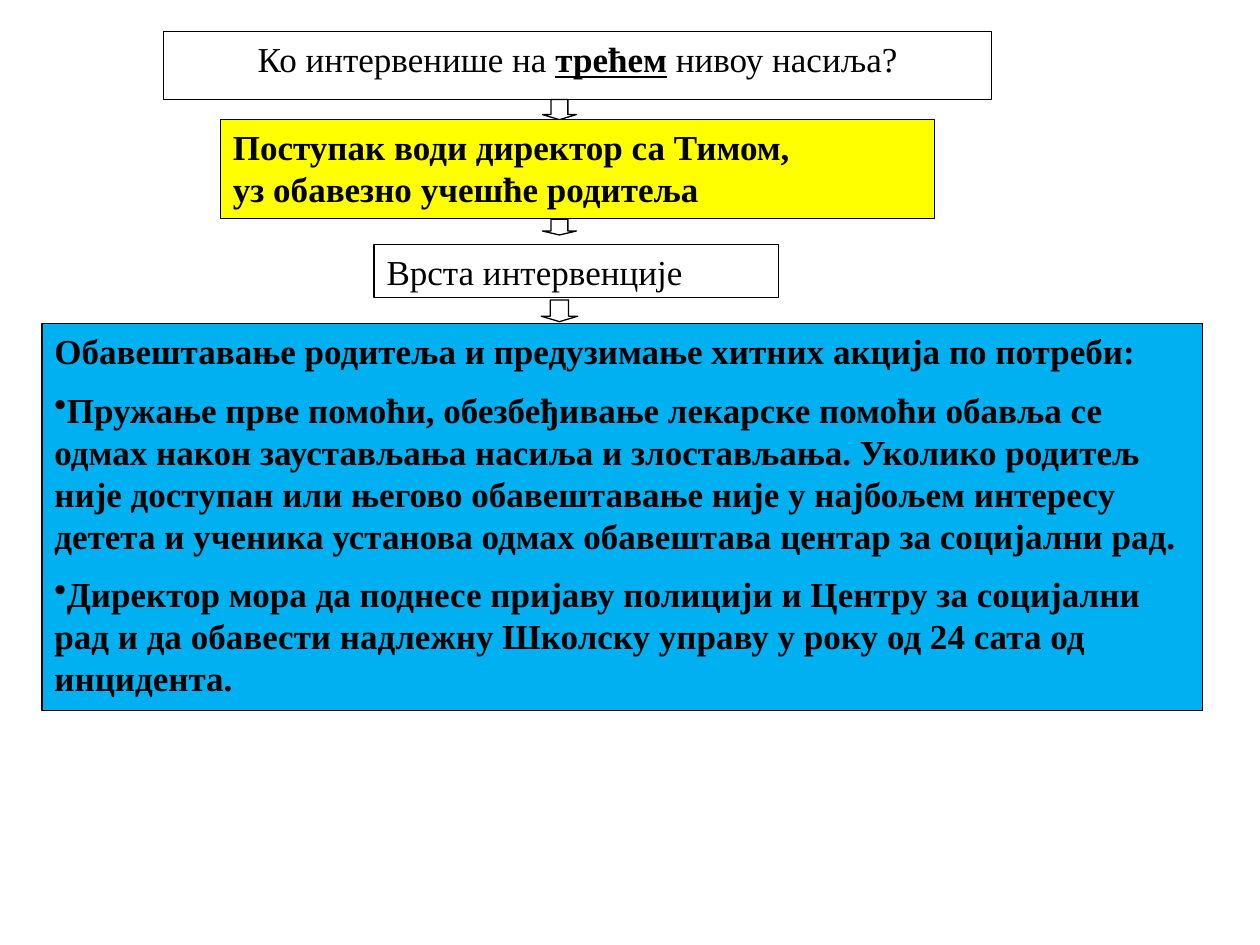
from lxml.etree import SubElement
from pptx import Presentation
from pptx.dml.color import RGBColor
from pptx.enum.shapes import MSO_SHAPE
from pptx.enum.text import MSO_ANCHOR, MSO_AUTO_SIZE, PP_ALIGN
from pptx.oxml.ns import qn
from pptx.util import Pt

BLACK = RGBColor(0x00, 0x00, 0x00)
WHITE = RGBColor(0xFF, 0xFF, 0xFF)
YELLOW = RGBColor(0xFF, 0xFF, 0x00)
BLUE = RGBColor(0x00, 0xB0, 0xF0)

FONT = "Times New Roman"
ARROW_CENTRE = 319.7
PARAGRAPH_GAP = 9.5

LEADER = ["Поступак води директор са Тимом,", "уз обавезно учешће родитеља"]
ACTIONS_HEADING = "Обавештавање родитеља и предузимање хитних акција по потреби:"
ACTIONS = [
    "Пружање прве помоћи, обезбеђивање лекарске помоћи обавља се одмах након "
    "заустављања насиља и злостављања. Уколико родитељ није доступан или његово "
    "обавештавање није у најбољем интересу детета и ученика установа одмах "
    "обавештава центар за социјални рад.",
    "Директор мора да поднесе пријаву полицији и Центру за социјални рад и да "
    "обавести надлежну Школску управу у року од 24 сата од инцидента.",
]


def paint(shape, fill):
    shape.fill.solid()
    shape.fill.fore_color.rgb = fill
    shape.line.color.rgb = BLACK
    shape.line.width = Pt(0.75)


def format_run(run, bold=False, underline=False):
    run.font.name = FONT
    run.font.size = Pt(20)
    run.font.color.rgb = BLACK
    run.font.bold = bold
    run.font.underline = underline


def prepare_frame(frame):
    frame.word_wrap = True
    frame.auto_size = MSO_AUTO_SIZE.NONE
    frame.vertical_anchor = MSO_ANCHOR.TOP


def add_question(slide, left, top, width, height):
    question = slide.shapes.title
    question.left, question.top = Pt(left), Pt(top)
    question.width, question.height = Pt(width), Pt(height)
    paint(question, WHITE)
    prepare_frame(question.text_frame)
    line = question.text_frame.paragraphs[0]
    line.alignment = PP_ALIGN.CENTER
    for words, stressed in (
        ("Ко интервенише на ", False),
        ("трећем", True),
        (" нивоу насиља?", False),
    ):
        run = line.add_run()
        run.text = words
        format_run(run, bold=stressed, underline=stressed)


def add_box(slide, left, top, width, height, lines, fill, bold=False):
    box = slide.shapes.add_shape(
        MSO_SHAPE.RECTANGLE, Pt(left), Pt(top), Pt(width), Pt(height)
    )
    box.shadow.inherit = False
    paint(box, fill)
    prepare_frame(box.text_frame)
    box.text_frame.text = "\n".join(lines)
    for paragraph in box.text_frame.paragraphs:
        paragraph.alignment = PP_ALIGN.LEFT
        for run in paragraph.runs:
            format_run(run, bold)
    return box


def add_bullet(paragraph):
    paragraph.space_before = Pt(PARAGRAPH_GAP)
    properties = paragraph._p.get_or_add_pPr()
    SubElement(properties, qn("a:buChar")).set("char", "•")


def add_down_arrow(slide, top, width, height):
    arrow = slide.shapes.add_shape(
        MSO_SHAPE.DOWN_ARROW,
        Pt(ARROW_CENTRE - width / 2), Pt(top), Pt(width), Pt(height),
    )
    arrow.shadow.inherit = False
    arrow.adjustments[1] = 0.25
    paint(arrow, WHITE)


def main():
    presentation = Presentation()
    presentation.slide_width, presentation.slide_height = Pt(720), Pt(540)
    slide = presentation.slides.add_slide(presentation.slide_layouts[5])

    # Question and who leads the procedure
    add_question(slide, 93.6, 18, 473, 39)
    add_down_arrow(slide, 56.9, 19.4, 11.5)
    add_box(slide, 126, 68.4, 408.2, 56.6, LEADER, YELLOW, bold=True)

    # Kind of intervention
    add_down_arrow(slide, 125.3, 19.4, 9)
    add_box(slide, 213.8, 139.7, 231.1, 30.2, ["Врста интервенције"], WHITE)

    # Required actions
    add_down_arrow(slide, 171.4, 20.9, 12.4)
    actions = add_box(
        slide, 24, 184.8, 663, 221.2, [ACTIONS_HEADING, *ACTIONS], BLUE, bold=True
    )
    for action in actions.text_frame.paragraphs[1:]:
        add_bullet(action)

    presentation.save("out.pptx")


if __name__ == "__main__":
    main()
